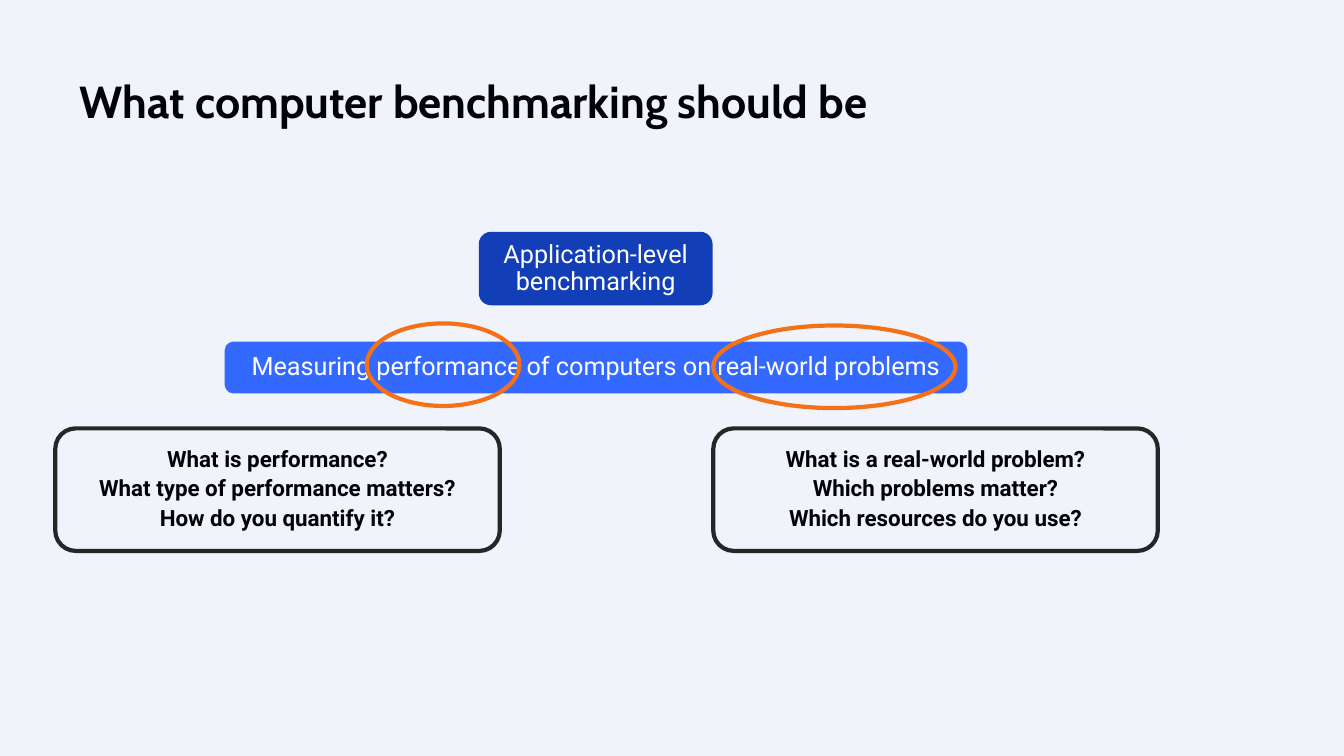
from pptx import Presentation
from pptx.dml.color import RGBColor
from pptx.enum.shapes import MSO_SHAPE
from pptx.enum.text import MSO_ANCHOR, MSO_AUTO_SIZE, PP_ALIGN
from pptx.util import Pt


def rgb(value):
    return RGBColor.from_string(value)


def add_box(shape, left, top, width, height, fill=None, line=None,
            text="", size=18, color="FFFFFF", bold=False):
    sp = s.shapes.add_shape(shape, Pt(left), Pt(top), Pt(width), Pt(height))
    sp.shadow.inherit = False
    if fill:
        sp.fill.solid()
        sp.fill.fore_color.rgb = rgb(fill)
    else:
        sp.fill.background()
    if line:
        sp.line.color.rgb = rgb(line)
        sp.line.width = Pt(3)
    else:
        sp.line.fill.background()
    if not text:
        return
    tf = sp.text_frame
    tf.text = text
    tf.word_wrap = True
    tf.vertical_anchor = MSO_ANCHOR.MIDDLE
    tf.margin_left = tf.margin_right = tf.margin_top = tf.margin_bottom = Pt(11.5)
    for i, p in enumerate(tf.paragraphs):
        p.alignment = PP_ALIGN.CENTER
        p.line_spacing = 0.9
        p.space_before = Pt(2 if i else 0)
        p.space_after = Pt(2)
        for r in p.runs:
            r.font.name = "Roboto"
            r.font.size = Pt(size)
            r.font.bold = bold
            r.font.color.rgb = rgb(color)


prs = Presentation()
prs.slide_width, prs.slide_height = Pt(960), Pt(540)
s = prs.slides.add_slide(prs.slide_layouts[5])
s.background.fill.solid()
s.background.fill.fore_color.rgb = rgb("F0F3FA")

title = s.shapes.title
title.left, title.top, title.width, title.height = Pt(57), Pt(57), Pt(847), Pt(29)
tf = title.text_frame
tf.text = "What computer benchmarking should be"
tf.word_wrap = True
tf.auto_size = MSO_AUTO_SIZE.NONE
tf.vertical_anchor = MSO_ANCHOR.TOP
tf.margin_left = tf.margin_right = tf.margin_top = tf.margin_bottom = 0
p = tf.paragraphs[0]
p.alignment = PP_ALIGN.LEFT
p.line_spacing = 0.9
r = p.runs[0]
r.font.name = "Cabin"
r.font.size = Pt(32)
r.font.bold = True
r.font.color.rgb = rgb("00030A")

statements = [
    (342, 165.6, 167, 52.5, "123EB7", "Application-level benchmarking"),
    (160.5, 244, 530.5, 37, "3369FF",
     "Measuring performance of computers on real-world problems"),
]
for left, top, width, height, fill, text in statements:
    add_box(MSO_SHAPE.ROUNDED_RECTANGLE, left, top, width, height, fill=fill, text=text)

for left, top, width in [(262, 231, 109), (509.5, 232.5, 173)]:
    add_box(MSO_SHAPE.OVAL, left, top, width, 59, line="F57118")

questions = [
    (39.5, ["What is performance?",
            "What type of performance matters?",
            "How do you quantify it?"]),
    (509.5, ["What is a real-world problem?",
             "Which problems matter?",
             "Which resources do you use?"]),
]
for left, lines in questions:
    add_box(MSO_SHAPE.ROUNDED_RECTANGLE, left, 306, 317.5, 87.5, line="262626",
            text="\n".join(lines), size=16, color="00030A", bold=True)

prs.save("out.pptx")
